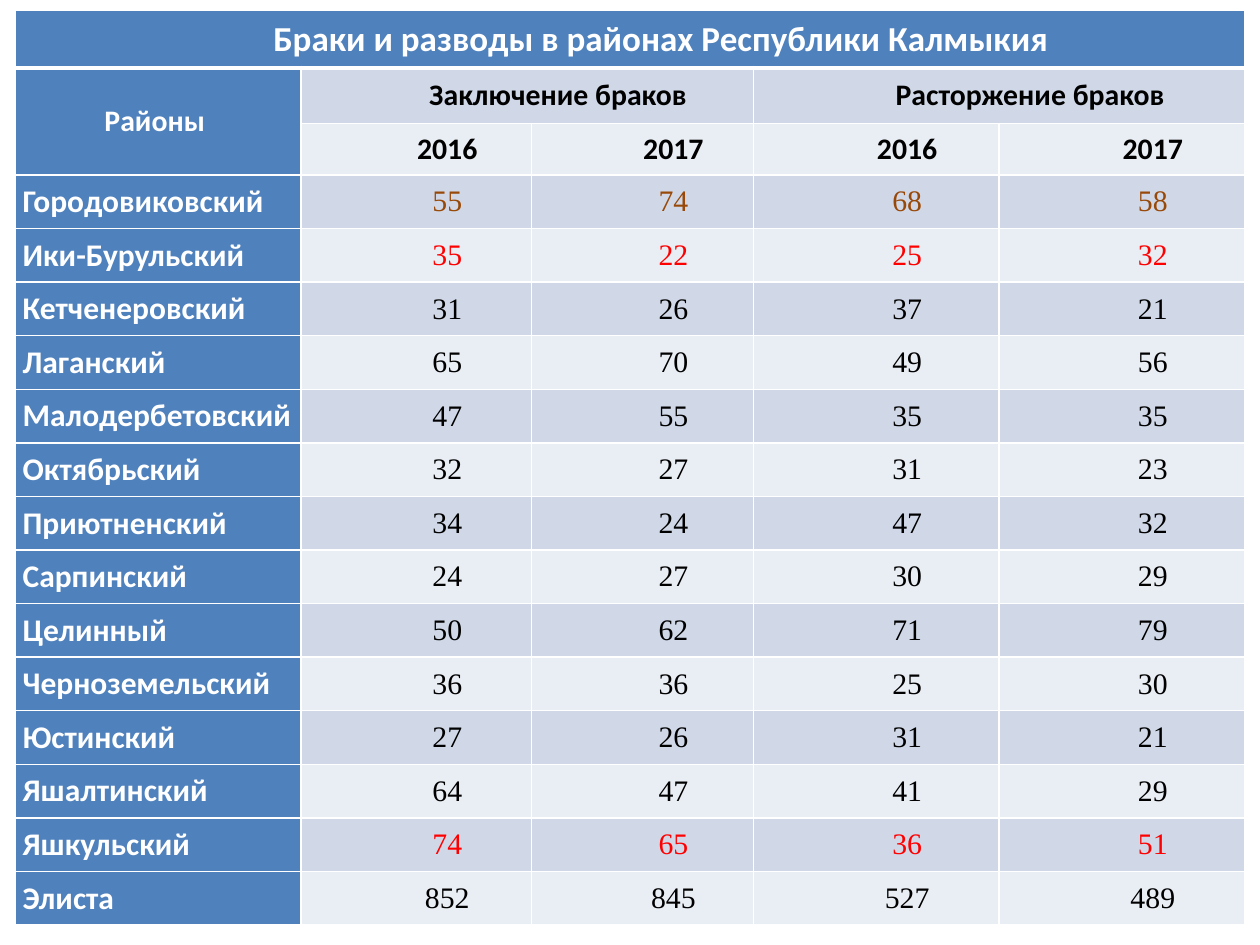
import pptx
import pptx.util
import pptx.dml.color
import pptx.enum.text
import pptx.oxml
import pptx.oxml.ns

Inches = pptx.util.Inches
RGB = pptx.dml.color.RGBColor
Align = pptx.enum.text.PP_ALIGN

BLUE = RGB(0x4F, 0x81, 0xBD)
BAND = RGB(0xD0, 0xD8, 0xE8)
PALE = RGB(0xE9, 0xED, 0xF4)
WHITE = RGB(0xFF, 0xFF, 0xFF)
BLACK = RGB(0, 0, 0)
RED = RGB(0xFF, 0, 0)
BROWN = RGB(0x98, 0x48, 0x07)

WIDTHS = [2.27, 1.83, 1.76, 1.95, 1.95]
HEAD = 3  # rows above the data

# District, marriages 2016 and 2017, divorces 2016 and 2017
DATA = [
    ("Городовиковский", 55, 74, 68, 58),
    ("Ики-Бурульский", 35, 22, 25, 32),
    ("Кетченеровский", 31, 26, 37, 21),
    ("Лаганский", 65, 70, 49, 56),
    ("Малодербетовский", 47, 55, 35, 35),
    ("Октябрьский", 32, 27, 31, 23),
    ("Приютненский", 34, 24, 47, 32),
    ("Сарпинский", 24, 27, 30, 29),
    ("Целинный", 50, 62, 71, 79),
    ("Черноземельский", 36, 36, 25, 30),
    ("Юстинский", 27, 26, 31, 21),
    ("Яшалтинский", 64, 47, 41, 29),
    ("Яшкульский", 74, 65, 36, 51),
    ("Элиста", 852, 845, 527, 489),
]
MARKS = {"Городовиковский": BROWN, "Ики-Бурульский": RED, "Яшкульский": RED}


def add_edges(cell, top, base):
    """White lines on all four sides, widths in points."""
    props = cell._tc.get_or_add_tcPr()
    for side, width in (("L", 1), ("R", 1), ("T", top), ("B", base)):
        props.append(pptx.oxml.parse_xml(
            f'<a:ln{side} {pptx.oxml.ns.nsdecls("a")} w="{pptx.util.Pt(width)}">'
            f'<a:solidFill><a:srgbClr val="{WHITE}"/></a:solidFill></a:ln{side}>'))


def style_cell(cell, row, col):
    """Edges, margins and banded fill by place in the grid."""
    add_edges(cell, 3 if row == 1 else 1, 3 if row == 0 else 1)
    cell.margin_left = cell.margin_right = Inches(0.06)
    cell.margin_top = cell.margin_bottom = Inches(0.06)
    cell.vertical_anchor = pptx.enum.text.MSO_ANCHOR.MIDDLE
    cell.fill.solid()
    if row == 0 or col == 0:
        cell.fill.fore_color.rgb = BLUE
    else:
        cell.fill.fore_color.rgb = BAND if row % 2 else PALE


def put_text(cell, text, size=17, color=BLACK, bold=True, face="Calibri",
             align=Align.CENTER, indent=0.49):
    cell.text_frame.text = text
    para = cell.text_frame.paragraphs[0]
    para.alignment = align
    if indent:
        para._p.get_or_add_pPr().set("indent", str(Inches(indent)))
    font = para.runs[0].font
    font.name = face
    font.size = pptx.util.Pt(size)
    font.bold = bold
    font.color.rgb = color


def add_grid(slide):
    rows = HEAD + len(DATA)
    table = slide.shapes.add_table(
        rows, len(WIDTHS), Inches(0.12), Inches(0.08),
        Inches(sum(WIDTHS)), Inches(7.25)).table
    for col, width in zip(table.columns, WIDTHS):
        col.width = Inches(width)
    for num, row in enumerate(table.rows):
        row.height = Inches(0.44 if num < 2 else 0.4)
        for col, cell in enumerate(row.cells):
            style_cell(cell, num, col)
    return table


def fill_head(table):
    # Merged title, row label and column groups
    for first, last in (((0, 0), (0, 4)), ((1, 0), (2, 0)),
                        ((1, 1), (1, 2)), ((1, 3), (1, 4))):
        table.cell(*first).merge(table.cell(*last))
    put_text(table.cell(0, 0), "Браки и разводы в районах Республики Калмыкия",
             size=20, color=WHITE)
    put_text(table.cell(1, 0), "Районы ", color=WHITE, indent=0)
    put_text(table.cell(1, 1), "Заключение браков")
    put_text(table.cell(1, 3), "Расторжение браков")
    for col in range(1, 5):
        put_text(table.cell(2, col), "2016" if col % 2 else "2017")


def fill_data(table):
    for row, (name, *counts) in enumerate(DATA, HEAD):
        put_text(table.cell(row, 0), name, size=18, color=WHITE,
                 align=Align.LEFT, indent=0)
        for col, count in enumerate(counts, 1):
            put_text(table.cell(row, col), str(count), bold=False,
                     color=MARKS.get(name, BLACK), face="Times New Roman")


def main():
    deck = pptx.Presentation()
    deck.slide_width = Inches(10)
    deck.slide_height = Inches(7.5)
    slide = deck.slides.add_slide(deck.slide_layouts[6])
    table = add_grid(slide)
    fill_head(table)
    fill_data(table)
    deck.save("out.pptx")


if __name__ == "__main__":
    main()
